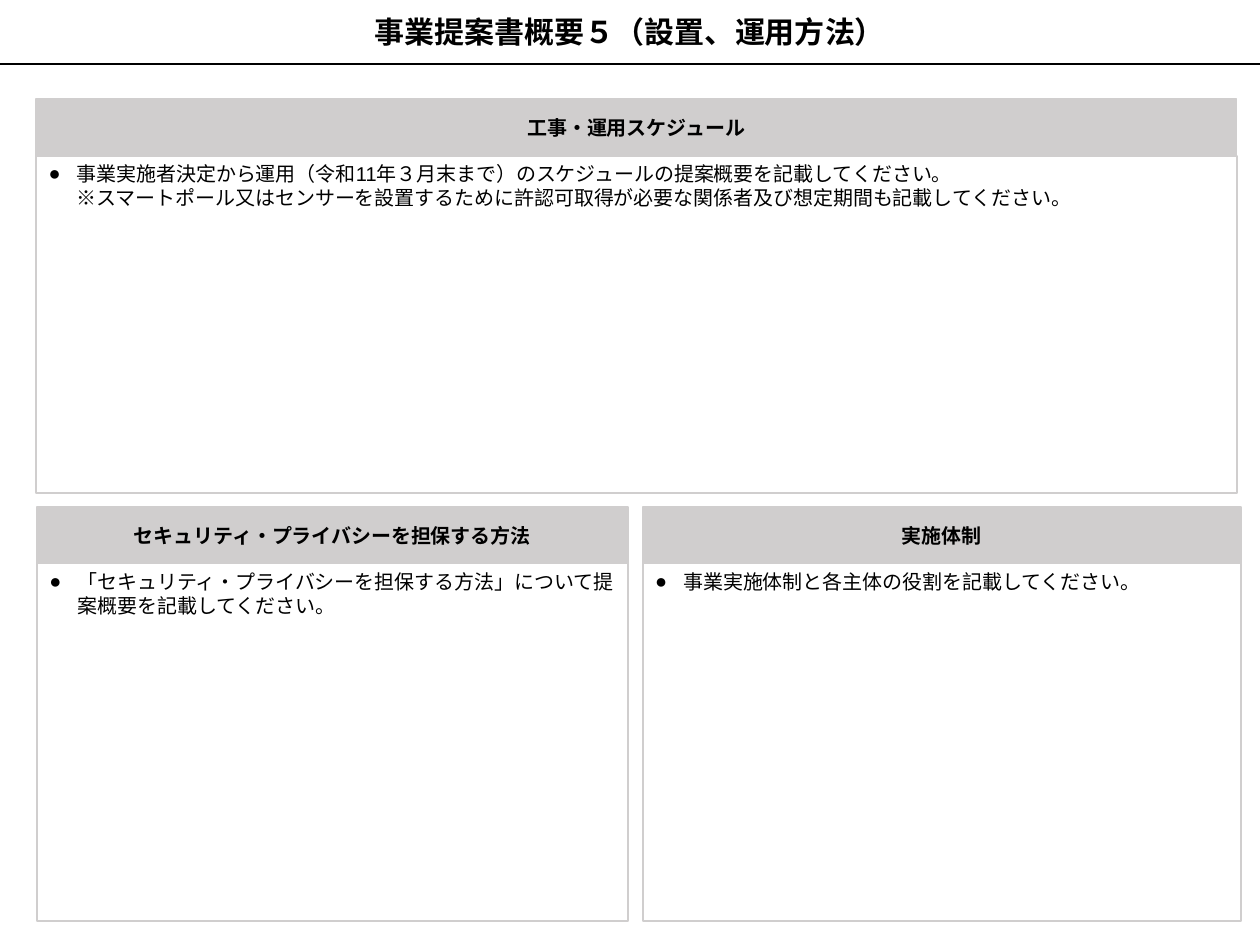
"""Build the proposal summary slide on installation and operation."""
from lxml.etree import SubElement
from pptx import Presentation
from pptx.dml.color import RGBColor
from pptx.enum.shapes import MSO_CONNECTOR, MSO_SHAPE
from pptx.enum.text import MSO_ANCHOR as ANCHOR, MSO_AUTO_SIZE as FIT, PP_ALIGN as ALIGN
from pptx.oxml.ns import qn
from pptx.util import Pt

TITLE = "事業提案書概要５（設置、運用方法）"
PANELS = [
    {"head": "工事・運用スケジュール", "font": "Arial", "holder": 1,
     "body": "事業実施者決定から運用（令和11年３月末まで）のスケジュールの提案概要を記載してください。\n"
             "※スマートポール又はセンサーを設置するために許認可取得が必要な関係者及び想定期間も記載してください。",
     "box": (28.8, 79.2, 960.5, 315.4)},
    {"head": "セキュリティ・プライバシーを担保する方法", "font": "Calibri", "holder": 2,
     "body": "「セキュリティ・プライバシーを担保する方法」について提案概要を記載してください。",
     "box": (29.5, 405.4, 473, 331.6)},
    {"head": "実施体制", "font": "Calibri", "holder": 4,
     "body": "事業実施体制と各主体の役割を記載してください。",
     "box": (514.1, 405.4, 478.8, 331.6)},
]

WIDTH, HEIGHT = 1008, 756
TITLE_H, HEAD_H = 51.1, 45.4
INDENT = 22.5
BLACK = RGBColor(0, 0, 0)
WHITE = RGBColor(255, 255, 255)
GRAY = RGBColor(0xD0, 0xCE, 0xCE)


def place(sp, x, y, w, h):
    sp.left, sp.top, sp.width, sp.height = Pt(x), Pt(y), Pt(w), Pt(h)


def paint(sp, fill, line, width):
    sp.fill.solid()
    sp.fill.fore_color.rgb = fill
    sp.line.color.rgb = line
    sp.line.width = Pt(width)


def write(sp, text, font, size, bold, anchor, align):
    tf = sp.text_frame
    tf.auto_size = FIT.NONE
    tf.vertical_anchor = anchor
    p = tf.paragraphs[0]
    p.text = text
    p.alignment = align
    for r in p.runs:
        r.font.name, r.font.size, r.font.bold = font, Pt(size), bold
        r.font.color.rgb = BLACK
        SubElement(r.font._element, qn("a:ea"), typeface=font)
    for br in p._p.findall(qn("a:br")):
        SubElement(br, qn("a:rPr"), sz=str(size * 100))
    return tf


def set_margins(tf):
    tf.margin_left = tf.margin_right = Pt(10)
    tf.margin_top = tf.margin_bottom = Pt(5)


def add_bullet(p):
    p.space_before = Pt(6)
    pPr = p._p.get_or_add_pPr()
    pPr.set("marL", str(Pt(INDENT)))
    pPr.set("indent", str(-Pt(INDENT)))
    SubElement(pPr, qn("a:buFont"), typeface="Arial")
    SubElement(pPr, qn("a:buChar"), char="●")


def add_panel(s, panel):
    x, y, w, h = panel["box"]
    body = s.placeholders[panel["holder"]]
    place(body, x, y + HEAD_H, w, h - HEAD_H)
    paint(body, WHITE, GRAY, 1.5)
    tf = write(body, panel["body"], panel["font"], 16, False, ANCHOR.TOP, ALIGN.LEFT)
    tf.word_wrap = True
    set_margins(tf)
    add_bullet(tf.paragraphs[0])

    head = s.shapes.add_shape(MSO_SHAPE.RECTANGLE, Pt(x), Pt(y), Pt(w), Pt(HEAD_H))
    head.shadow.inherit = False
    paint(head, GRAY, GRAY, 1.5)
    tf = write(head, panel["head"], "Calibri", 16, True, ANCHOR.MIDDLE, ALIGN.CENTER)
    tf.word_wrap = False
    set_margins(tf)


def main():
    prs = Presentation()
    prs.slide_width, prs.slide_height = Pt(WIDTH), Pt(HEIGHT)
    s = prs.slides.add_slide(prs.slide_layouts.get_by_name("Comparison"))

    title = s.shapes.title
    place(title, 0, 0, WIDTH, TITLE_H)
    paint(title, WHITE, WHITE, 1)
    write(title, TITLE, "Arial", 24, True, ANCHOR.MIDDLE, ALIGN.CENTER)

    rule = s.shapes.add_connector(MSO_CONNECTOR.STRAIGHT, 0, Pt(TITLE_H), Pt(WIDTH), Pt(TITLE_H))
    rule.line.color.rgb = BLACK
    rule.line.width = Pt(1.5)
    SubElement(rule._element.spPr, qn("a:effectLst"))

    for panel in PANELS:
        add_panel(s, panel)

    used = {panel["holder"] for panel in PANELS} | {0}
    for sp in list(s.placeholders):
        if sp.placeholder_format.idx not in used:
            sp._element.getparent().remove(sp._element)
    prs.save("out.pptx")


if __name__ == "__main__":
    main()
